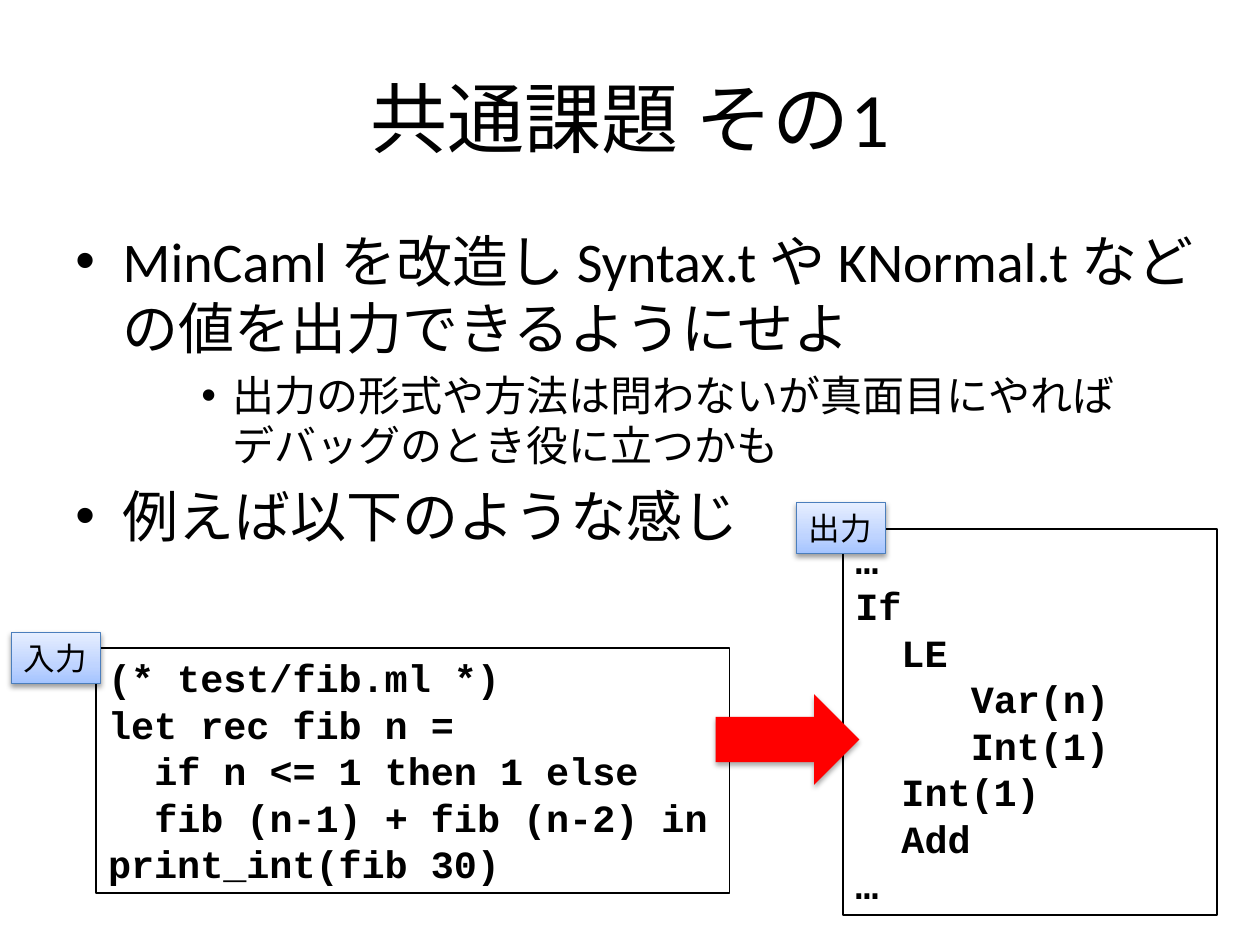
from pptx import Presentation
from pptx import util as u
from pptx.dml.color import RGBColor
from pptx.enum import lang, shapes, text
from pptx.oxml import parse_xml
from pptx.oxml.ns import nsdecls, qn

Pt = u.Pt
BLACK = RGBColor(0, 0, 0)
RED = RGBColor(0xFF, 0, 0)
EDGE = RGBColor(0x4B, 0x7E, 0xBC)
BLUES = [(0, "A4C4FF"), (35, "BFD4FF"), (100, "E6EEFF")]

TITLE = ["共通課題 その1"]
BODY = [
    ("MinCaml を改造し Syntax.t や KNormal.t などの値を出力できるようにせよ", 0),
    ("出力の形式や方法は問わないが真面目にやれば\vデバッグのとき役に立つかも", 2),
    ("例えば以下のような感じ", 0),
]
LEVELS = {0: (32, 27, 27), 2: (24, 90, 18)}
CODES = [
    ((54.7, 370.1, 362.2, 140.4), [
        (0, "(* test/fib.ml *)"),
        (0, "let rec fib n ="),
        (2, "if n <= 1 then 1 else"),
        (2, "fib (n-1) + fib (n-2) in"),
        (0, "print_int(fib 30)"),
    ]),
    ((481.7, 302.4, 213.8, 220.3), [
        (0, "…"),
        (0, "If"),
        (2, "LE"),
        (5, "Var(n)"),
        (5, "Int(1)"),
        (2, "Int(1)"),
        (2, "Add"),
        (0, "…"),
    ]),
]
LABELS = [("入力", 6.5, 361.4), ("出力", 455, 287.3)]
ARROW = (409, 396.7, 82.1, 51.8)
CODE_SIZE = 22
CHAR = CODE_SIZE * 0.6
LEADING = 26.6


def write(para, words, size=18, font="Calibri", bold=False, align=None,
          left=0, hang=0, before=0, leading=None, bullet=False):
    para.text = words
    para.alignment = align
    para.space_before = Pt(before)
    if leading:
        para.line_spacing = Pt(leading)
    props = para._p.get_or_add_pPr()
    props.set("marL", str(Pt(left)))
    props.set("indent", str(-Pt(hang)))
    if bullet:
        props.append(parse_xml(f'<a:buFont {nsdecls("a")} typeface="Arial"/>'))
        props.append(parse_xml(f'<a:buChar {nsdecls("a")} char="•"/>'))
    for run in para.runs:
        face = run.font
        face.name, face.size, face.bold = font, Pt(size), bold
        face.color.rgb = BLACK
        face.language_id = lang.MSO_LANGUAGE_ID.JAPANESE


def paras(frame, count):
    return [frame.paragraphs[0]] + [frame.add_paragraph() for _ in range(count - 1)]


def add_box(slide, place, anchor=text.MSO_ANCHOR.TOP):
    box = slide.shapes.add_textbox(*map(Pt, place))
    box.text_frame.word_wrap = True
    box.text_frame.vertical_anchor = anchor
    return box


def add_form(slide, kind, place):
    form = slide.shapes.add_shape(kind, *map(Pt, place))
    form.shadow.inherit = False
    return form


def cast(form, alpha, dist):
    effects = form._element.spPr.find(qn("a:effectLst"))
    effects.append(parse_xml(
        f'<a:outerShdw {nsdecls("a")} blurRad="{Pt(3.1)}" dist="{Pt(dist)}" '
        f'dir="5400000" rotWithShape="0"><a:srgbClr val="000000">'
        f'<a:alpha val="{alpha * 1000}"/></a:srgbClr></a:outerShdw>'))


def shade(form):
    stops = "".join(f'<a:gs pos="{pos * 1000}"><a:srgbClr val="{tint}"/></a:gs>'
                    for pos, tint in BLUES)
    form._element.spPr.find(qn("a:prstGeom")).addnext(parse_xml(
        f'<a:gradFill {nsdecls("a")} rotWithShape="1"><a:gsLst>{stops}</a:gsLst>'
        f'<a:lin ang="16200000" scaled="0"/></a:gradFill>'))


def add_label(slide, words, left, top):
    form = add_form(slide, shapes.MSO_SHAPE.RECTANGLE, (left, top, 51.1, 29.1))
    shade(form)
    form.line.color.rgb = EDGE
    form.line.width = Pt(0.75)
    cast(form, 38, 1.6)
    form.text_frame.word_wrap = False
    form.text_frame.vertical_anchor = text.MSO_ANCHOR.TOP
    write(form.text_frame.paragraphs[0], words, align=text.PP_ALIGN.LEFT)


def main():
    deck = Presentation()
    deck.slide_width, deck.slide_height = Pt(720), Pt(540)
    slide = deck.slides.add_slide(deck.slide_layouts[6])

    title = add_box(slide, (36, 21.6, 648, 90), text.MSO_ANCHOR.MIDDLE)
    write(title.text_frame.paragraphs[0], TITLE[0], size=44,
          align=text.PP_ALIGN.CENTER)

    body = add_box(slide, (36, 126, 669.6, 356.4))
    for para, (words, level) in zip(paras(body.text_frame, len(BODY)), BODY):
        size, left, hang = LEVELS[level]
        para.level = level
        write(para, words, size=size, left=left, hang=hang,
              before=size * 0.2, bullet=True)

    for place, lines in CODES:
        box = add_box(slide, place)
        box.line.color.rgb = BLACK
        box.line.width = Pt(1)
        for para, (depth, words) in zip(paras(box.text_frame, len(lines)), lines):
            write(para, words, size=CODE_SIZE, font="Courier New", bold=True,
                  left=depth * CHAR, leading=LEADING)

    arrow = add_form(slide, shapes.MSO_SHAPE.RIGHT_ARROW, ARROW)
    arrow.fill.solid()
    arrow.fill.fore_color.rgb = RED
    arrow.line.fill.background()
    cast(arrow, 35, 1.8)

    for label in LABELS:
        add_label(slide, *label)

    deck.save("out.pptx")


if __name__ == "__main__":
    main()
